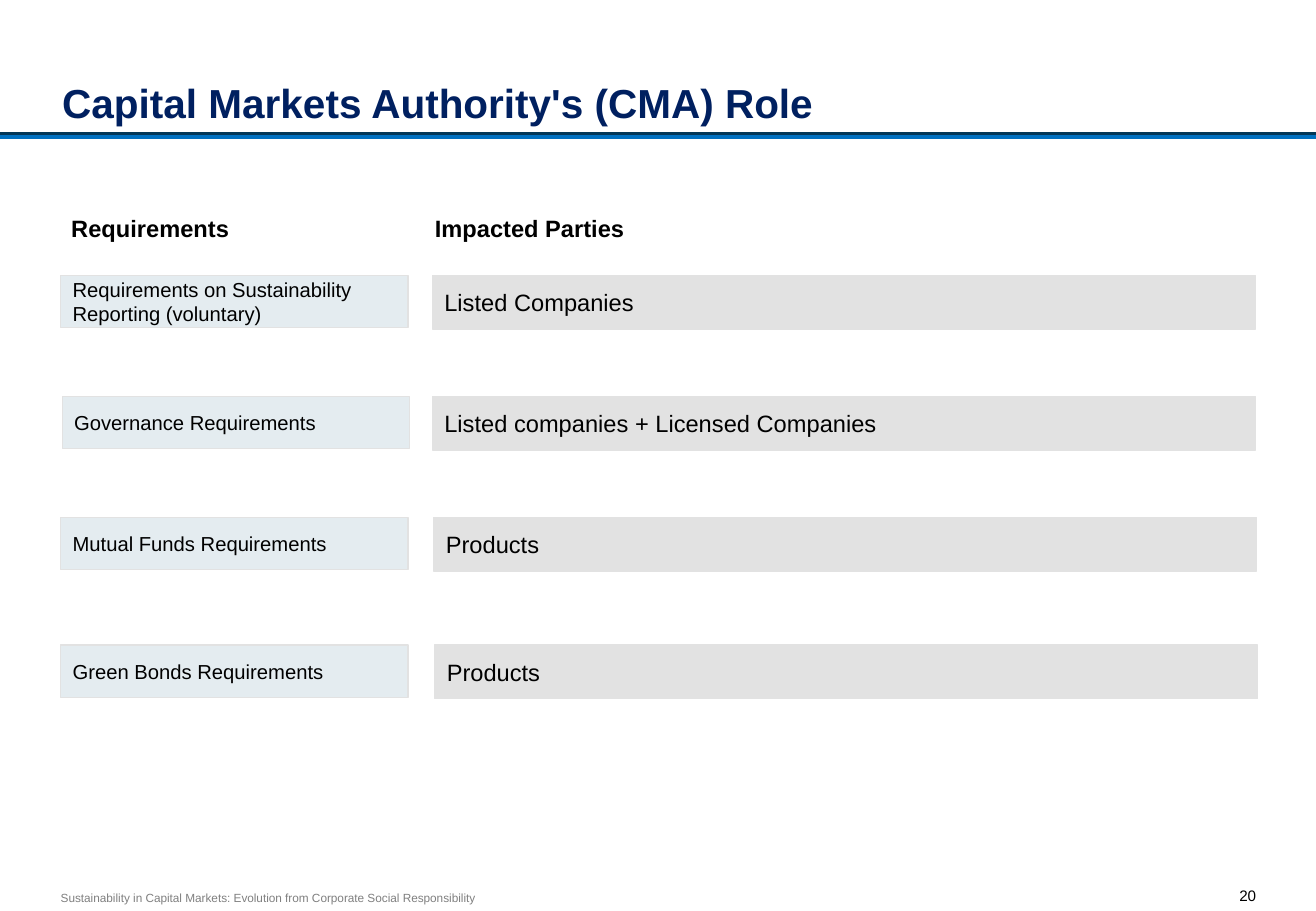
from lxml import etree
from pptx import Presentation
from pptx import util as u
from pptx.dml.color import RGBColor
from pptx.enum import shapes, text
from pptx.oxml.ns import qn

NAVY = RGBColor(0x00, 0x20, 0x60)
DEEP_BLUE = RGBColor(0x02, 0x37, 0x57)
BLUE = RGBColor(0x00, 0x70, 0xC0)
PALE_BLUE = RGBColor(0xE4, 0xEC, 0xF0)
LIGHT_GREY = RGBColor(0xE2, 0xE2, 0xE2)
GREY = RGBColor(0x80, 0x80, 0x80)
BLACK = RGBColor(0, 0, 0)

WIDTH, HEIGHT = 27.51, 19.05
HEADING_TOP = 4.22
# top, requirement left, requirement, party left, party
ROWS = [
    (5.76, 1.27, "Requirements on Sustainability Reporting (voluntary)",
     9.04, "Listed Companies"),
    (8.29, 1.3, "Governance Requirements",
     9.04, "Listed companies + Licensed Companies"),
    (10.82, 1.27, "Mutual Funds Requirements", 9.07, "Products"),
    (13.49, 1.27, "Green Bonds Requirements", 9.09, "Products"),
]


class SlideBuilder:
    font = "Arial"

    def __init__(self, prs):
        self.s = prs.slides.add_slide(prs.slide_layouts[5])

    def set_text(self, sp, words, size, color=BLACK, bold=False, inset=(0.25, 0.25),
                 anchor=text.MSO_ANCHOR.MIDDLE, align=text.PP_ALIGN.LEFT, wrap=True):
        """Fill a shape with one run; inset is (horizontal, vertical) in cm."""
        tf = sp.text_frame
        tf.auto_size = text.MSO_AUTO_SIZE.NONE
        tf.word_wrap = wrap
        tf.vertical_anchor = anchor
        tf.margin_left = tf.margin_right = u.Cm(inset[0])
        tf.margin_top = tf.margin_bottom = u.Cm(inset[1])
        p = tf.paragraphs[0]
        p.alignment = align
        r = p.add_run()
        r.text = words
        r.font.name = self.font
        r.font.size = u.Pt(size)
        r.font.bold = bold
        r.font.color.rgb = color

    def title(self, words, left, top, width, height):
        sp = self.s.shapes.title
        sp.left, sp.top = u.Cm(left), u.Cm(top)
        sp.width, sp.height = u.Cm(width), u.Cm(height)
        self.set_text(sp, words, 24, NAVY, True, (0, 0.13), text.MSO_ANCHOR.BOTTOM)

    def label(self, words, left, top, width, height, size, **style):
        sp = self.s.shapes.add_textbox(*map(u.Cm, (left, top, width, height)))
        self.set_text(sp, words, size, **style)

    def box(self, words, left, top, width, height, size, fill):
        sp = self.s.shapes.add_shape(
            shapes.MSO_SHAPE.RECTANGLE, *map(u.Cm, (left, top, width, height)))
        sp.shadow.inherit = False
        sp.fill.solid()
        sp.fill.fore_color.rgb = fill
        sp.line.color.rgb = LIGHT_GREY
        sp.line.width = u.Pt(0.75)
        self.set_text(sp, words, size)

    def rule(self, top):
        """Draw a full-width line with a solid blue shadow just below it."""
        line = self.s.shapes.add_connector(
            shapes.MSO_CONNECTOR.STRAIGHT, *map(u.Cm, (WIDTH, top, 0, top)))
        line.line.color.rgb = DEEP_BLUE
        line.line.width = u.Pt(2.25)
        effects = etree.SubElement(line._element.spPr, qn("a:effectLst"))
        shadow = etree.SubElement(
            effects, qn("a:outerShdw"), blurRad="0", dist=str(u.Pt(2)),
            dir="5400000", algn="ctr", rotWithShape="0")
        etree.SubElement(shadow, qn("a:srgbClr"), val=str(BLUE))


def main():
    prs = Presentation()
    prs.slide_width, prs.slide_height = u.Cm(WIDTH), u.Cm(HEIGHT)
    b = SlideBuilder(prs)

    b.rule(2.79)
    b.title("Capital Markets Authority's (CMA) Role", 1.3, 0.46, 24.97, 2.31)

    for heading, left in (("Requirements", 1.24), ("Impacted Parties", 8.84)):
        b.label(heading, left, HEADING_TOP, 7.26, 1.12, 14, bold=True,
                anchor=text.MSO_ANCHOR.TOP)

    for top, left, requirement, party_left, party in ROWS:
        b.box(requirement, left, top, 7.26, 1.09, 12, PALE_BLUE)
        b.box(party, party_left, top, 17.2, 1.12, 14, LIGHT_GREY)

    b.label("Sustainability in Capital Markets: Evolution from Corporate "
            "Social Responsibility", 1.27, 18.62, 8.7, 0.3, 7,
            color=GREY, inset=(0, 0), wrap=False)
    b.label("20", 25.73, 18.54, 0.53, 0.36, 9, inset=(0, 0), wrap=False,
            anchor=text.MSO_ANCHOR.TOP, align=text.PP_ALIGN.RIGHT)

    prs.save("out.pptx")


if __name__ == "__main__":
    main()
